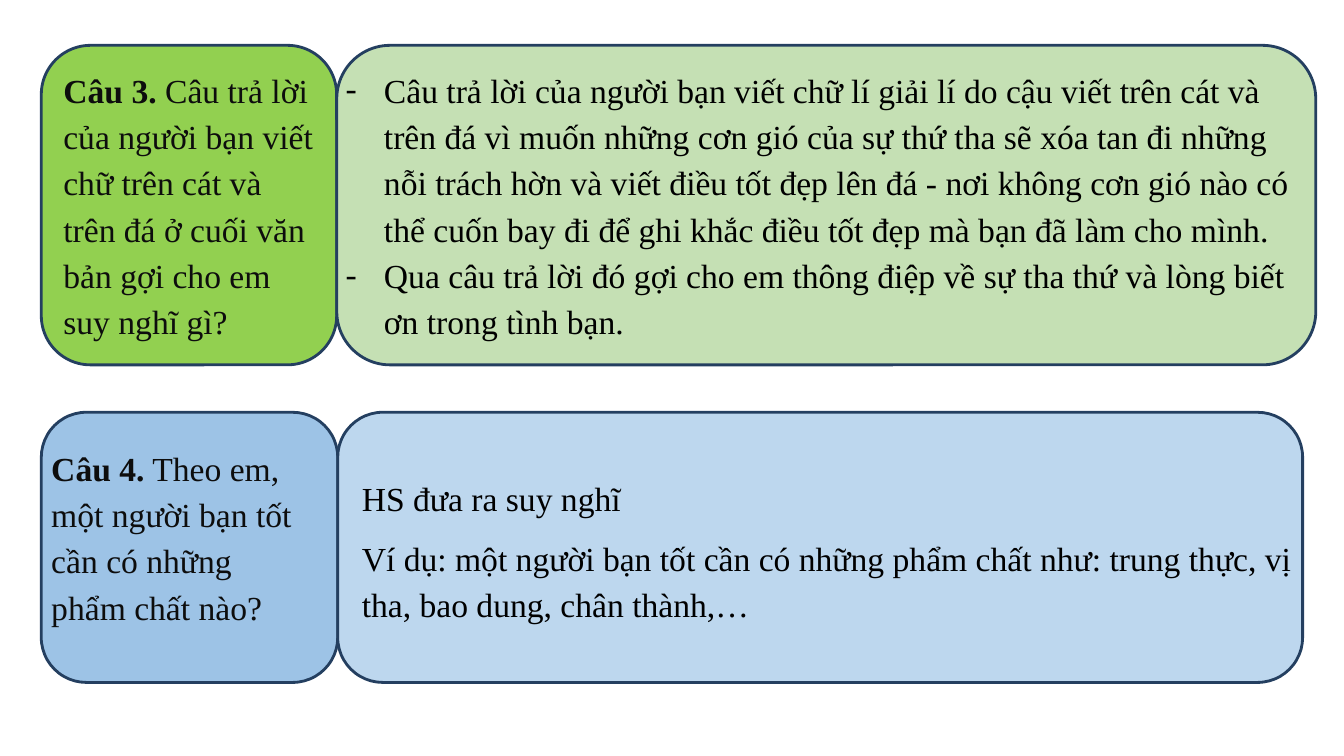
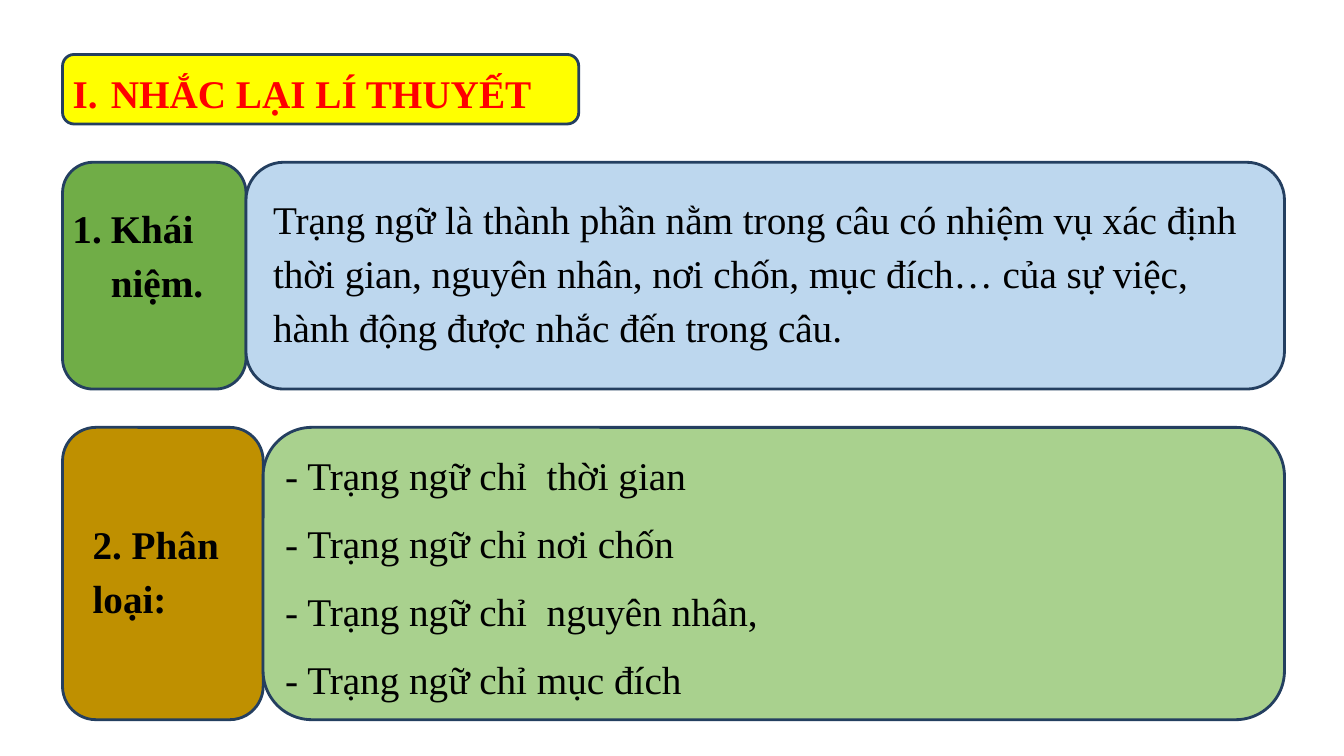
from lxml.etree import SubElement
from pptx import Presentation
from pptx.dml.color import RGBColor
from pptx.enum.shapes import MSO_SHAPE
from pptx.enum.text import MSO_ANCHOR, MSO_AUTO_SIZE, PP_ALIGN
from pptx.oxml.ns import qn
from pptx.util import Inches, Pt

FONT = "Times New Roman"
HANGING = Inches(0.38)
TITLE_ONLY, BLANK = 5, 6
DASH = ("a:buChar", {"char": "-"})
ROMAN = ("a:buAutoNum", {"type": "romanUcPeriod"})
ARABIC = ("a:buAutoNum", {"type": "arabicPeriod"})

COLORS = {
    "outline": "243F60",
    "black": "000000",
    "question": "0D0D0D",
    "red": "FF0000",
    "yellow": "FFFF00",
    "lime": "92D050",
    "pale green": "C5E0B4",
    "soft green": "A9D18E",
    "green": "70AD47",
    "blue": "9DC3E6",
    "pale blue": "BDD7EE",
    "gold": "BF9000",
}


def color(name):
    return RGBColor.from_string(COLORS[name])


def add_card(slide, left, top, width, height, fill):
    """Rounded, outlined panel."""
    card = slide.shapes.add_shape(MSO_SHAPE.ROUNDED_RECTANGLE, Inches(left),
                                  Inches(top), Inches(width), Inches(height))
    card.shadow.inherit = False
    card.fill.solid()
    card.fill.fore_color.rgb = color(fill)
    card.line.color.rgb = color("outline")
    card.line.width = Pt(2)


def add_row(slide, left, split, right, top, height, fills):
    """Label card and answer card that meet at the split."""
    add_card(slide, left, top, split - left, height, fills[0])
    add_card(slide, split, top, right - split, height, fills[1])


def set_marker(paragraph, marker):
    """Hanging bullet or automatic number."""
    props = paragraph._p.get_or_add_pPr()
    props.set("marL", str(HANGING))
    props.set("indent", str(-HANGING))
    SubElement(props, qn("a:buFont"), typeface=FONT)
    tag, settings = marker
    SubElement(props, qn(tag), settings)


def write(frame, lines, size, ink="black", bold=False, lead="", marker=None,
          tight=False):
    """Fill a frame; lead is a bold opening, tight spaces only the last line."""
    frame.word_wrap = True
    frame.auto_size = MSO_AUTO_SIZE.SHAPE_TO_FIT_TEXT
    frame.vertical_anchor = MSO_ANCHOR.TOP
    frame.text = "\n".join([lead or lines[0]] + lines[1:])
    if lead:
        frame.paragraphs[0].add_run().text = lines[0]
    for number, paragraph in enumerate(frame.paragraphs, 1):
        paragraph.alignment = PP_ALIGN.LEFT
        paragraph.line_spacing = 1.15
        paragraph.space_after = Pt(0 if tight and number < len(lines) else 10)
        if marker:
            set_marker(paragraph, marker)
        for run in paragraph.runs:
            run.font.name = FONT
            run.font.size = Pt(size)
            run.font.bold = bold
            run.font.color.rgb = color(ink)
    if lead:
        frame.paragraphs[0].runs[0].font.bold = True


def add_text(slide, left, top, width, height, lines, size, **style):
    box = slide.shapes.add_textbox(Inches(left), Inches(top),
                                   Inches(width), Inches(height))
    write(box.text_frame, lines, size, **style)


def place_title(slide, left, top, width, height, text):
    """Title placeholder, brought in front of its card."""
    title = slide.shapes.title
    title.left, title.top = Inches(left), Inches(top)
    title.width, title.height = Inches(width), Inches(height)
    write(title.text_frame, [text], 28, ink="red", bold=True, marker=ROMAN)
    title.element.getparent().append(title.element)


def build_questions(deck):
    slide = deck.slides.add_slide(deck.slide_layouts[BLANK])

    # Question 3
    add_row(slide, 0.41, 3.34, 13.05, 0.45, 3.17, ("lime", "pale green"))
    add_text(slide, 0.53, 0.58, 2.68, 2.85, [
        "Câu trả lời của người bạn viết chữ trên cát và trên đá ở cuối văn bản "
        "gợi cho em suy nghĩ gì?",
    ], 24, ink="question", lead="Câu 3. ")
    add_text(slide, 3.33, 0.58, 9.59, 2.85, [
        "Câu trả lời của người bạn viết chữ lí giải lí do cậu viết trên cát và "
        "trên đá vì muốn những cơn gió của sự thứ tha sẽ xóa tan đi những nỗi "
        "trách hờn và viết điều tốt đẹp lên đá - nơi không cơn gió nào có thể "
        "cuốn bay đi để ghi khắc điều tốt đẹp mà bạn đã làm cho mình.",
        "Qua câu trả lời đó gợi cho em thông điệp về sự tha thứ và lòng biết ơn "
        "trong tình bạn.",
    ], 24, marker=DASH, tight=True)

    # Question 4
    add_row(slide, 0.41, 3.35, 12.92, 4.09, 2.68, ("blue", "pale blue"))
    add_text(slide, 0.41, 4.33, 2.79, 1.92, [
        " Theo em, một người bạn tốt cần có những phẩm chất nào?",
    ], 24, ink="question", lead="Câu 4.")
    add_text(slide, 3.49, 4.63, 9.43, 1.6, [
        "HS đưa ra suy nghĩ",
        "Ví dụ: một người bạn tốt cần có những phẩm chất như: trung thực, vị "
        "tha, bao dung, chân thành,…",
    ], 24)


def build_theory(deck):
    slide = deck.slides.add_slide(deck.slide_layouts[TITLE_ONLY])

    # Heading
    add_card(slide, 0.62, 0.54, 5.12, 0.69, "yellow")
    place_title(slide, 0.62, 0.57, 4.79, 0.6, "NHẮC LẠI LÍ THUYẾT")

    # Concept
    add_row(slide, 0.62, 2.44, 12.74, 1.61, 2.25, ("green", "pale blue"))
    add_text(slide, 0.62, 1.91, 1.68, 1.14, ["Khái niệm."], 28, bold=True,
             marker=ARABIC)
    add_text(slide, 2.61, 1.82, 10, 1.68, [
        "Trạng ngữ là thành phần nằm trong câu có nhiệm vụ xác định thời gian, "
        "nguyên nhân, nơi chốn, mục đích… của sự việc, hành động được nhắc đến "
        "trong câu.",
    ], 28)

    # Classification
    add_row(slide, 0.62, 2.61, 12.74, 4.24, 2.9, ("gold", "soft green"))
    add_text(slide, 0.82, 5.04, 1.72, 1.14, ["2. Phân loại:"], 28, bold=True)
    add_text(slide, 2.73, 4.36, 9.88, 2.65, [
        "- Trạng ngữ chỉ  thời gian",
        "- Trạng ngữ chỉ nơi chốn",
        "- Trạng ngữ chỉ  nguyên nhân,",
        "- Trạng ngữ chỉ mục đích",
    ], 28)


def main():
    deck = Presentation()
    deck.slide_width, deck.slide_height = Inches(13.33), Inches(7.5)
    build_questions(deck)
    build_theory(deck)
    deck.save("out.pptx")


if __name__ == "__main__":
    main()
